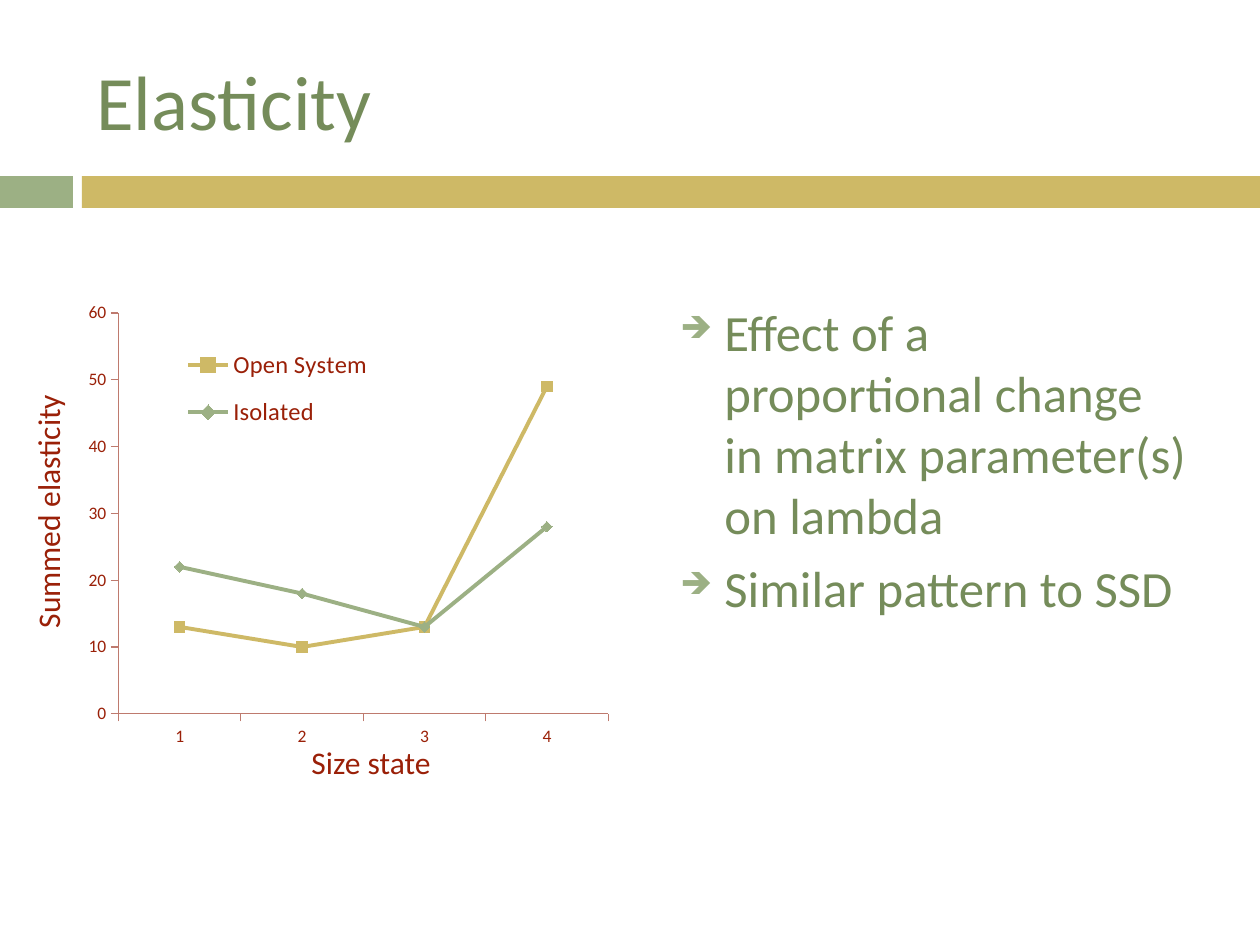
from lxml import etree
from pptx import Presentation
from pptx.chart.data import CategoryChartData
from pptx.dml.color import RGBColor
from pptx.enum.chart import XL_CHART_TYPE, XL_LEGEND_POSITION, XL_MARKER_STYLE, XL_TICK_MARK
from pptx.enum.shapes import MSO_SHAPE
from pptx.enum.text import MSO_ANCHOR, PP_ALIGN
from pptx.oxml.ns import qn
from pptx.util import Emu, Pt

PX = 914400 // 126
FONT = "Calibri"
COLORS = {"sage": "9CB084", "gold": "CEB966", "moss": "758C5A", "rust": "9A2008", "axis": "BE7A6E"}

TITLE = "Elasticity"
BULLETS = [
    "Effect of a proportional change in matrix parameter(s) on lambda",
    "Similar pattern to SSD",
]
BARS = [((0, 176, 73, 32), "sage"), ((82, 176, 1178, 32), "gold")]
SIZE_STATES = ["1", "2", "3", "4"]
SERIES = [
    ("Open System", [13, 10, 13, 49], "gold", XL_MARKER_STYLE.SQUARE),
    ("Isolated", [22, 18, 13, 28], "sage", XL_MARKER_STYLE.DIAMOND),
]
AXIS_TITLES = [("Summed elasticity", (-83, 486, 262, 51), 270), ("Size state", (298, 737, 146, 51), 0)]
CHART_BOX = (73, 294, 756, 462)
PLOT_BOX = (118, 313, 490, 401)
LEGEND_BOX = (176, 333, 204, 112)


def color(name):
    return RGBColor.from_string(COLORS[name])


def emu(box):
    return [Emu(length * PX) for length in box]


def style_font(font, size, color_name):
    font.name, font.size = FONT, Pt(size)
    font.color.rgb = color(color_name)


def add_text(slide, box, lines, size, color_name, wrap=True):
    shape = slide.shapes.add_textbox(*emu(box))
    frame = shape.text_frame
    frame.word_wrap = wrap
    for index, line in enumerate(lines):
        paragraph = frame.add_paragraph() if index else frame.paragraphs[0]
        run = paragraph.add_run()
        run.text = line
        style_font(run.font, size, color_name)
    return shape


def add_bullet(paragraph):
    properties = paragraph._p.get_or_add_pPr()
    properties.set("marL", str(44 * PX))
    properties.set("indent", str(-44 * PX))
    bullet_color = etree.SubElement(properties, qn("a:buClr"))
    etree.SubElement(bullet_color, qn("a:srgbClr"), val=COLORS["sage"])
    etree.SubElement(properties, qn("a:buSzPct"), val="60000")
    etree.SubElement(properties, qn("a:buChar"), char="➔")


def set_layout(element, box, before, inner=False):
    """Place a chart part at a slide position, as fractions of the chart."""
    for old in element.findall(qn("c:layout")):
        element.remove(old)
    layout = etree.Element(qn("c:layout"))
    manual = etree.SubElement(layout, qn("c:manualLayout"))
    if inner:
        etree.SubElement(manual, qn("c:layoutTarget"), val="inner")
    for side in "xy":
        etree.SubElement(manual, qn(f"c:{side}Mode"), val="edge")
    left, top, width, height = CHART_BOX
    fractions = ((box[0] - left) / width, (box[1] - top) / height, box[2] / width, box[3] / height)
    for key, fraction in zip("xywh", fractions):
        etree.SubElement(manual, qn(f"c:{key}"), val=f"{fraction:.3f}")
    element.find(qn(before)).addprevious(layout)


def add_elasticity_chart(slide):
    data = CategoryChartData()
    data.categories = SIZE_STATES
    for name, values, _, _ in SERIES:
        data.add_series(name, values)
    chart = slide.shapes.add_chart(XL_CHART_TYPE.LINE_MARKERS, *emu(CHART_BOX), data).chart
    chart.has_title = False
    style_font(chart.font, 10, "rust")
    plot = chart.plots[0]
    plot.vary_by_categories = False
    for series, (_, _, color_name, marker) in zip(plot.series, SERIES):
        series.smooth = False
        series.format.line.color.rgb = color(color_name)
        series.format.line.width = Pt(2.25)
        series.marker.style, series.marker.size = marker, 6
        series.marker.format.fill.solid()
        series.marker.format.fill.fore_color.rgb = color(color_name)
        series.marker.format.line.color.rgb = color(color_name)
    for axis in (chart.category_axis, chart.value_axis):
        axis.has_major_gridlines = False
        axis.major_tick_mark = XL_TICK_MARK.OUTSIDE
        axis.format.line.color.rgb = color("axis")
        axis.format.line.width = Pt(0.75)
    chart.value_axis.minimum_scale = 0
    chart.value_axis.maximum_scale = 60
    chart.value_axis.major_unit = 10
    chart.has_legend = True
    legend = chart.legend
    legend.position = XL_LEGEND_POSITION.RIGHT
    legend.include_in_layout = False
    style_font(legend.font, 14, "rust")
    set_layout(legend._element, LEGEND_BOX, "c:overlay")
    set_layout(plot._element.getparent(), PLOT_BOX, "c:lineChart", inner=True)


def main():
    presentation = Presentation()
    presentation.slide_width, presentation.slide_height = emu((1260, 945))
    slide = presentation.slides.add_slide(presentation.slide_layouts[6])

    for box, color_name in BARS:
        bar = slide.shapes.add_shape(MSO_SHAPE.RECTANGLE, *emu(box))
        bar.shadow.inherit = False
        bar.fill.solid()
        bar.fill.fore_color.rgb = color(color_name)
        bar.line.fill.background()

    title = add_text(slide, (84, 32, 1124, 136), [TITLE], 44, "moss")
    title.text_frame.vertical_anchor = MSO_ANCHOR.MIDDLE

    body = add_text(slide, (668, 295, 536, 554), BULLETS, 29, "moss")
    for index, paragraph in enumerate(body.text_frame.paragraphs):
        if index:
            paragraph.space_before = Pt(7)
        add_bullet(paragraph)

    add_elasticity_chart(slide)
    for text, box, rotation in AXIS_TITLES:
        label = add_text(slide, box, [text], 18, "rust", wrap=False)
        label.text_frame.paragraphs[0].alignment = PP_ALIGN.CENTER
        label.rotation = rotation

    presentation.save("out.pptx")


if __name__ == "__main__":
    main()
